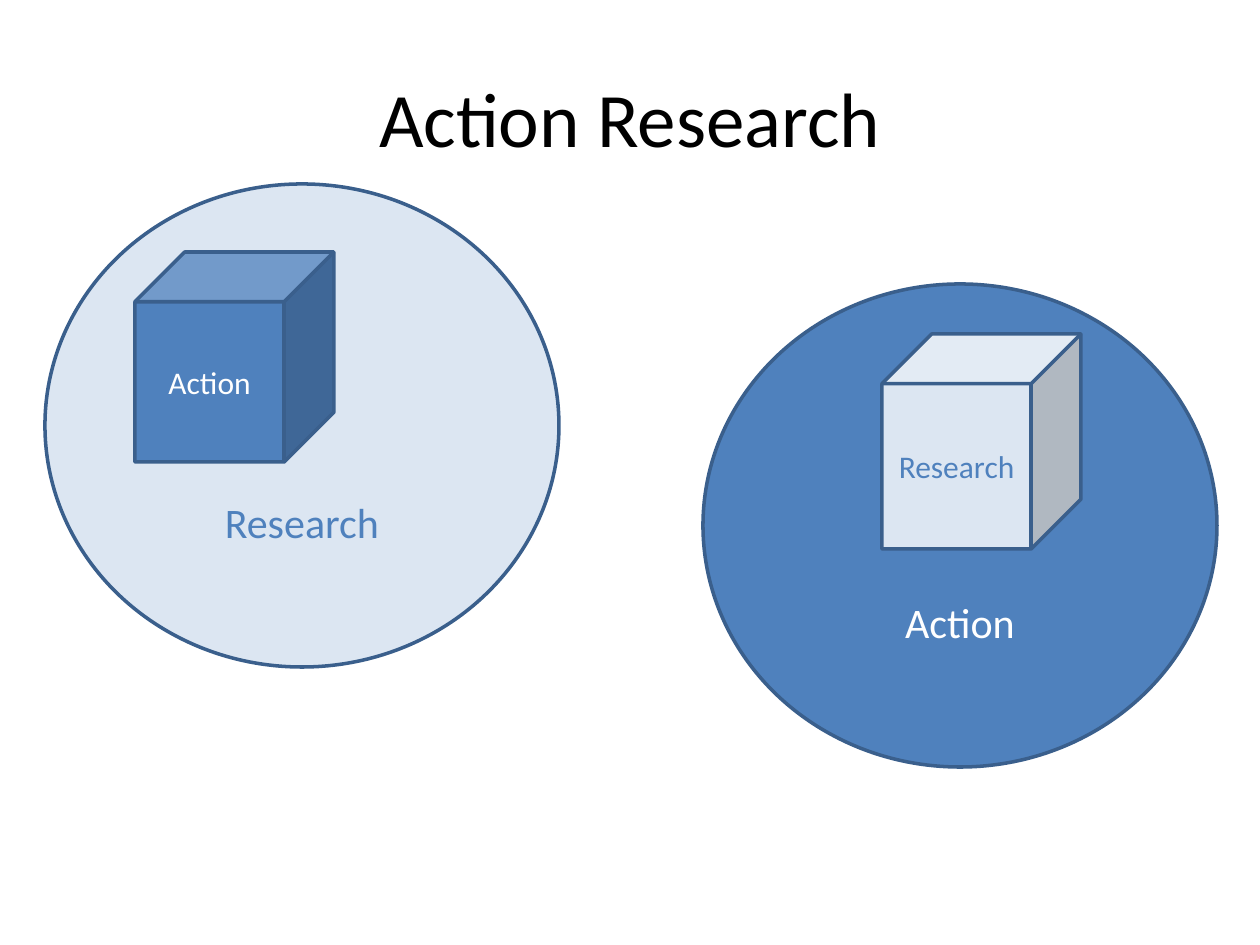
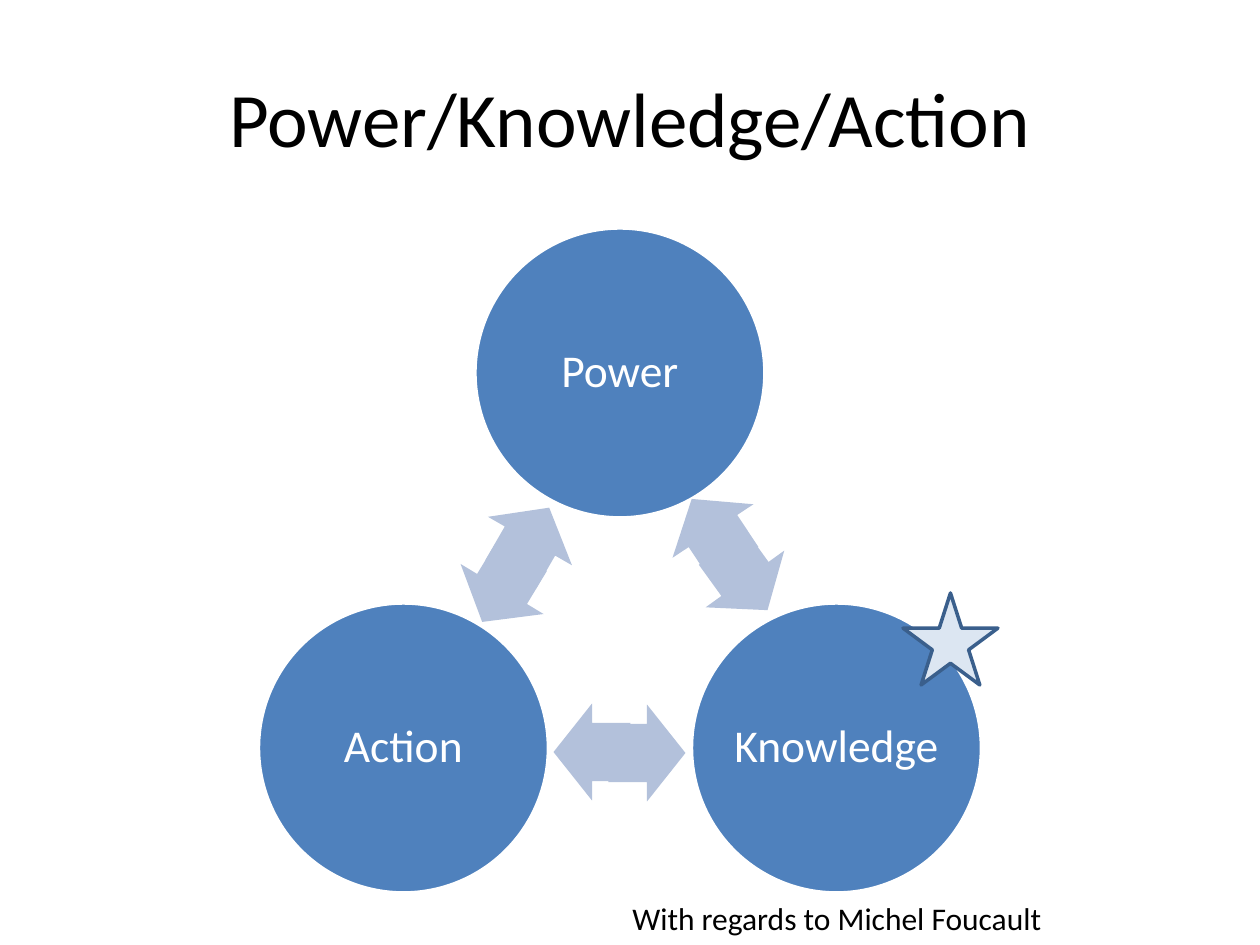
import math
from dataclasses import dataclass, field

from pptx import Presentation
from pptx import util as u
from pptx.dml.color import RGBColor
from pptx.enum import shapes, text

# Shared scale, colours and text formats
PX = u.Inches(1) / 126
FONT = "Calibri"
COLORS = {
    "black": "000000",
    "white": "FFFFFF",
    "blue": "4F81BD",
    "pale": "DCE6F2",
    "outline": "3A5F8C",
    "arrow": "B3C1DB",
}
TITLE_BOX = (63, 38, 1134, 157)
MIDDLE = {"word_wrap": True, "vertical_anchor": text.MSO_ANCHOR.MIDDLE}
CENTRED = {"alignment": text.PP_ALIGN.CENTER}
G = shapes.MSO_SHAPE


@dataclass
class Item:
    """A preset shape; box is left, top, width, height in px."""
    kind: int
    box: tuple
    fill: str
    line: str | None = "outline"
    label: str = ""
    size: int = 18
    color: str = "white"
    rotation: float = 0
    adjust: tuple = ()
    frame: dict = field(default_factory=dict)
    para: dict = field(default_factory=dict)


def emu(px: float) -> u.Emu:
    return u.Emu(round(px * PX))


def rgb(name: str) -> RGBColor:
    return RGBColor.from_string(COLORS[name])


def apply(target, formats: dict) -> None:
    for name, value in formats.items():
        setattr(target, name, value)


def place(sp, box: tuple) -> None:
    apply(sp, dict(zip(("left", "top", "width", "height"), map(emu, box))))


def write(tf, words: str, size: int, color: str, frame: dict, para: dict) -> None:
    apply(tf, frame)
    p = tf.paragraphs[0]
    apply(p, para)
    r = p.add_run()
    r.text = words
    apply(r.font, {"name": FONT, "size": u.Pt(size)})
    r.font.color.rgb = rgb(color)


def draw(s, item: Item) -> None:
    sp = s.shapes.add_shape(item.kind, *map(emu, item.box))
    sp.shadow.inherit = False
    sp.rotation = item.rotation
    for i, value in enumerate(item.adjust):
        sp.adjustments[i] = value
    sp.fill.solid()
    sp.fill.fore_color.rgb = rgb(item.fill)
    if item.line:
        sp.line.color.rgb = rgb(item.line)
        sp.line.width = u.Pt(2)
    else:
        sp.line.fill.background()
    if item.label:
        write(sp.text_frame, item.label, item.size, item.color,
              MIDDLE | item.frame, CENTRED | item.para)


def add_slide(prs, title: str):
    s = prs.slides.add_slide(prs.slide_layouts[5])
    place(s.shapes.title, TITLE_BOX)
    write(s.shapes.title.text_frame, title, 44, "black", MIDDLE, CENTRED)
    return s


# Slide 1: each field contains a cube of the other
def add_action_research(prs) -> None:
    s = add_slide(prs, "Action Research")
    low_label = {"margin_top": emu(199)}
    for item in (
        Item(G.OVAL, (45, 184, 514, 483), "pale", label="Research",
             size=24, color="blue", frame=low_label),
        Item(G.OVAL, (703, 284, 514, 483), "blue", label="Action",
             size=24, frame=low_label),
        Item(G.CUBE, (882, 334, 199, 215), "pale", label="Research", color="blue"),
        Item(G.CUBE, (135, 252, 199, 210), "blue", label="Action"),
    ):
        draw(s, item)


# Slide 2: three circles on a ring, joined by pairs of arrows
def add_power_cycle(prs) -> None:
    s = add_slide(prs, "Power/Knowledge/Action")
    ring_x, ring_y, ring_radius, diameter = 620, 623, 250, 290
    tight = {"word_wrap": False, "margin_left": 0, "margin_right": 0}
    for i, label in enumerate(("Power", "Knowledge", "Action")):
        angle = math.tau * i / 3
        x = ring_x + ring_radius * math.sin(angle) - diameter / 2
        y = ring_y - ring_radius * math.cos(angle) - diameter / 2
        draw(s, Item(G.OVAL, (x, y, diameter, diameter), "blue", "white", label,
                     26, frame=tight, para={"line_spacing": 0.9}))

    # Arrows: centre x, centre y, rotation
    width, height = 77, 97
    for x, y, rotation in (
        (745, 579, 54.2), (592, 752, 180), (530, 541, 300),
        (713, 531, 236.5), (647, 753, 0), (502, 589, 121.1),
    ):
        draw(s, Item(G.RIGHT_ARROW, (x - width / 2, y - height / 2, width, height),
                     "arrow", None, rotation=rotation, adjust=(0.6, 0.5)))

    # Credit line and star
    sp = s.shapes.add_textbox(*map(emu, (620, 893, 440, 50)))
    write(sp.text_frame, "With regards to Michel Foucault", 18, "black",
          {"word_wrap": False, "auto_size": text.MSO_AUTO_SIZE.SHAPE_TO_FIT_TEXT}, {})
    draw(s, Item(G.STAR_5_POINT, (903, 593, 95, 92), "pale"))


def main() -> None:
    prs = Presentation()
    apply(prs, {"slide_width": emu(1260), "slide_height": emu(945)})
    add_action_research(prs)
    add_power_cycle(prs)
    prs.save("out.pptx")


if __name__ == "__main__":
    main()
